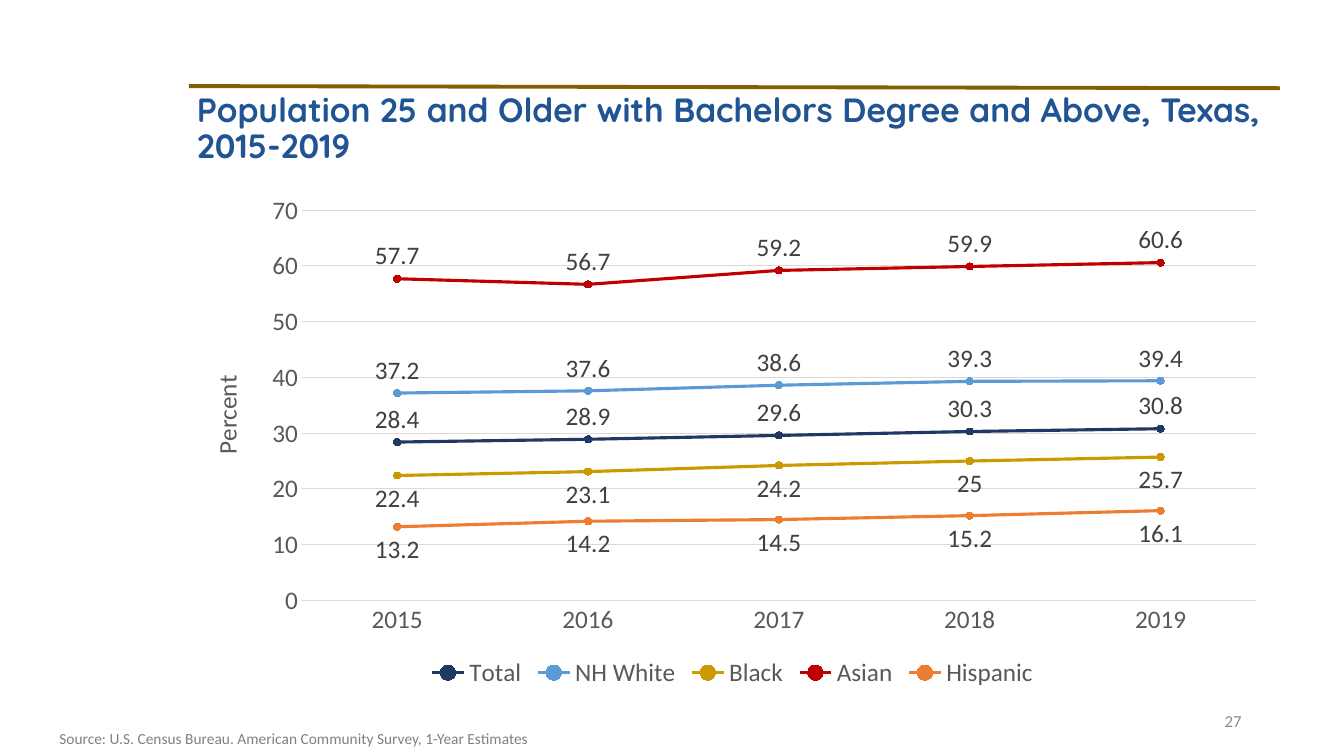
from lxml.etree import SubElement
from pptx import Presentation
from pptx.chart.data import CategoryChartData as ChartData
from pptx.dml.color import RGBColor as RGB
from pptx.enum.chart import XL_CHART_TYPE as Kind, XL_LABEL_POSITION as Pos
from pptx.enum.chart import XL_LEGEND_POSITION as Side, XL_MARKER_STYLE as Mark
from pptx.enum.chart import XL_TICK_MARK as Tick
from pptx.enum.shapes import MSO_CONNECTOR as Link
from pptx.enum.text import MSO_ANCHOR as Anchor, MSO_AUTO_SIZE as Fit, PP_ALIGN as Align
from pptx.oxml.ns import qn
from pptx.util import Pt

PX = 9525
GOLD = RGB(0x80, 0x60, 0x00)
BLUE = RGB(0x20, 0x54, 0x93)
NAVY = RGB(0x20, 0x38, 0x64)
SKY = RGB(0x5B, 0x9B, 0xD5)
OCHRE = RGB(0xCC, 0x99, 0x00)
RED = RGB(0xC0, 0x00, 0x00)
ORANGE = RGB(0xED, 0x7D, 0x31)
DARK = RGB(0x40, 0x40, 0x40)
GREY = RGB(0x59, 0x59, 0x59)
MID = RGB(0x80, 0x80, 0x80)
PALE = RGB(0x8C, 0x8C, 0x8C)
GRID = RGB(0xD9, 0xD9, 0xD9)


def box(*lengths):
    return [n * PX for n in lengths]


def style(font, size, color, name="Calibri", bold=False):
    font.size = Pt(size)
    font.color.rgb = color
    font.name = name
    font.bold = bold


deck = Presentation()
deck.slide_width, deck.slide_height = box(1280, 720)
slide = deck.slides.add_slide(deck.slide_layouts[5])
shapes = slide.shapes

rule = shapes.add_connector(Link.STRAIGHT, *box(180, 82, 1219, 84))
rule.line.color.rgb = GOLD
rule.line.width = Pt(2.75)
SubElement(rule.element.spPr, qn("a:effectLst"))

title = shapes.title
title.left, title.top, title.width, title.height = box(178, 84, 1039, 88)
frame = title.text_frame
frame.word_wrap = True
frame.auto_size = Fit.NONE
frame.vertical_anchor = Anchor.TOP
para = frame.paragraphs[0]
para.alignment = Align.LEFT
para.line_spacing = 0.9
run = para.add_run()
run.text = "Population 25 and Older with Bachelors Degree and Above, Texas, 2015-2019"
style(run.font, 24, BLUE, "Quicksand", True)

groups = [
    ("Total", NAVY, Pos.ABOVE, (28.4, 28.9, 29.6, 30.3, 30.8)),
    ("NH White", SKY, Pos.ABOVE, (37.2, 37.6, 38.6, 39.3, 39.4)),
    ("Black", OCHRE, Pos.BELOW, (22.4, 23.1, 24.2, 25, 25.7)),
    ("Asian", RED, Pos.ABOVE, (57.7, 56.7, 59.2, 59.9, 60.6)),
    ("Hispanic", ORANGE, Pos.BELOW, (13.2, 14.2, 14.5, 15.2, 16.1)),
]
data = ChartData()
data.categories = [str(year) for year in range(2015, 2020)]
for name, color, spot, rates in groups:
    data.add_series(name, rates)
chart = shapes.add_chart(Kind.LINE_MARKERS, *box(178, 176, 1039, 484), data).chart
chart.has_title = False
style(chart.font, 18, GREY)
chart.has_legend = True
chart.legend.position = Side.BOTTOM
chart.legend.include_in_layout = False
style(chart.legend.font, 18, GREY)
chart.plots[0].vary_by_categories = False

years, scale = chart.category_axis, chart.value_axis
for axis in (years, scale):
    axis.major_tick_mark = axis.minor_tick_mark = Tick.NONE
    style(axis.tick_labels.font, 18, GREY)
years.format.line.color.rgb = GRID
years.format.line.width = Pt(0.75)
scale.minimum_scale, scale.maximum_scale, scale.major_unit = 0, 70, 10
scale.format.line.fill.background()
scale.has_major_gridlines = True
scale.major_gridlines.format.line.color.rgb = GRID
scale.major_gridlines.format.line.width = Pt(0.75)
run = scale.axis_title.text_frame.paragraphs[0].add_run()
run.text = "Percent"
style(run.font, 18, GREY)

for line, (name, color, spot, rates) in zip(chart.plots[0].series, groups):
    line.smooth = False
    line.format.line.color.rgb = color
    line.format.line.width = Pt(2.25)
    line.marker.style = Mark.CIRCLE
    line.marker.size = 5
    line.marker.format.fill.solid()
    line.marker.format.fill.fore_color.rgb = color
    line.marker.format.line.color.rgb = color
    labels = line.data_labels
    labels.show_value = True
    labels.position = spot
    style(labels.font, 18, DARK)

notes = [
    ("27", (904, 667, 288, 38), 12, PALE, Align.RIGHT, Anchor.MIDDLE),
    ("Source: U.S. Census Bureau. American Community Survey, 1-Year Estimates",
     (47, 690, 840, 28), 11, MID, Align.LEFT, Anchor.TOP),
]
for text, place, size, color, align, anchor in notes:
    frame = shapes.add_textbox(*box(*place)).text_frame
    frame.word_wrap = True
    frame.vertical_anchor = anchor
    para = frame.paragraphs[0]
    para.alignment = align
    run = para.add_run()
    run.text = text
    style(run.font, size, color)

deck.save("out.pptx")
